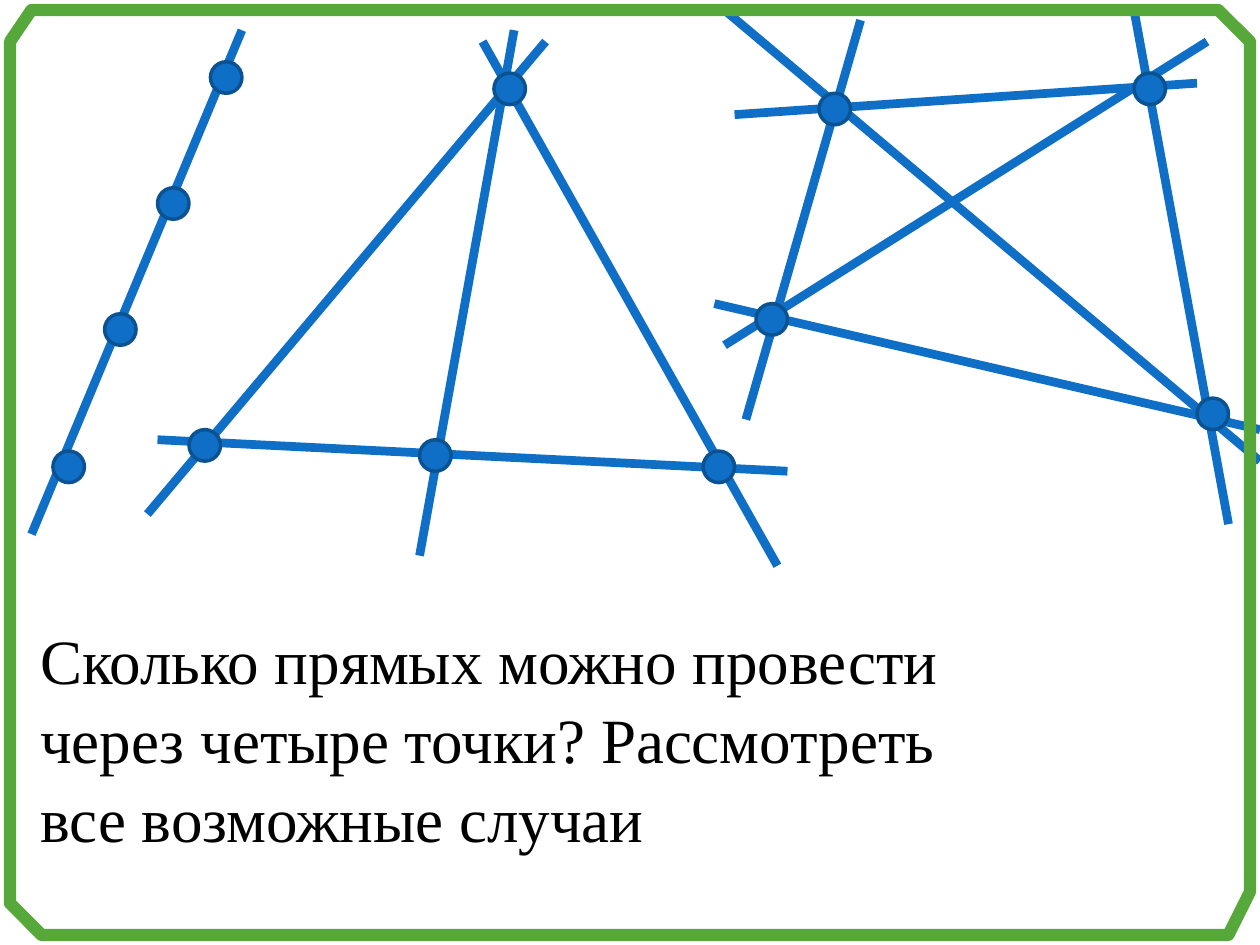
from dataclasses import dataclass

from pptx import Presentation
from pptx.dml.color import RGBColor
from pptx.enum.shapes import MSO_CONNECTOR as CONNECTOR, MSO_SHAPE as SHAPE
from pptx.oxml.ns import qn
from pptx.util import Pt
from lxml.etree import SubElement

PX = 9144  # EMU per px, at 100 px to the inch
COLORS = {"line": "0F6FC6", "dot_edge": "0B5292", "frame": "55A839", "text": "000000"}
DOT_SIZE = 25


@dataclass(frozen=True)
class Point:
    x: int
    y: int


@dataclass(frozen=True)
class Figure:
    """Four points, given by their top left corners, and the lines through them."""
    lines: list[tuple[Point, Point]]
    dots: list[Point]


COLLINEAR = Figure(
    lines=[(Point(25, 424), Point(192, 24))],
    dots=[Point(42, 358), Point(83, 249), Point(125, 149), Point(167, 49)],
)
THREE_COLLINEAR = Figure(
    lines=[
        (Point(117, 408), Point(433, 33)),
        (Point(617, 449), Point(383, 33)),
        (Point(333, 441), Point(408, 24)),
        (Point(125, 349), Point(625, 374)),
    ],
    dots=[Point(392, 58), Point(150, 341), Point(558, 358), Point(333, 349)],
)
GENERAL = Figure(
    lines=[
        (Point(583, 91), Point(950, 66)),
        (Point(975, 416), Point(900, 8)),
        (Point(575, 8), Point(1000, 366)),
        (Point(575, 274), Point(958, 33)),
        (Point(567, 241), Point(1000, 341)),
        (Point(592, 333), Point(683, 16)),
    ],
    dots=[Point(650, 74), Point(950, 316), Point(900, 58), Point(600, 241)],
)
FIGURES = [COLLINEAR, THREE_COLLINEAR, GENERAL]
FRAME = [
    Point(8, 33), Point(8, 717), Point(33, 742), Point(975, 742),
    Point(992, 708), Point(992, 33), Point(967, 8), Point(25, 8),
]
QUESTION = (
    "Сколько прямых можно провести через четыре точки? "
    "Рассмотреть все возможные случаи"
)


def rgb(name: str) -> RGBColor:
    return RGBColor.from_string(COLORS[name])


def set_line(shape, color: str, width: int) -> None:
    shape.line.color.rgb = rgb(color)
    shape.line.width = Pt(width)


def draw_line(page, start: Point, end: Point) -> None:
    line = page.shapes.add_connector(
        CONNECTOR.STRAIGHT, start.x * PX, start.y * PX, end.x * PX, end.y * PX
    )
    set_line(line, "line", 5)
    SubElement(line._element.spPr, qn("a:effectLst"))


def draw_dot(page, corner: Point) -> None:
    dot = page.shapes.add_shape(
        SHAPE.OVAL, corner.x * PX, corner.y * PX, DOT_SIZE * PX, DOT_SIZE * PX
    )
    dot.shadow.inherit = False
    dot.fill.solid()
    dot.fill.fore_color.rgb = rgb("line")
    set_line(dot, "dot_edge", 2)


def draw_frame(page, corners: list[Point]) -> None:
    first, *others = corners
    builder = page.shapes.build_freeform(first.x, first.y, scale=PX)
    builder.add_line_segments([(corner.x, corner.y) for corner in others], close=True)
    frame = builder.convert_to_shape()
    frame.shadow.inherit = False
    frame.fill.background()
    set_line(frame, "frame", 7)


def write_question(page) -> None:
    box = page.shapes.add_textbox(22 * PX, 485 * PX, 745 * PX, 192 * PX)
    box.text_frame.word_wrap = True
    para = box.text_frame.paragraphs[0]
    para.line_spacing = 1.05
    span = para.add_run()
    span.text = QUESTION
    span.font.name = "Times New Roman"
    span.font.size = Pt(36)
    span.font.color.rgb = rgb("text")


def main() -> None:
    deck = Presentation()
    deck.slide_width, deck.slide_height = 1000 * PX, 750 * PX
    page = deck.slides.add_slide(deck.slide_layouts[6])
    for figure in FIGURES:
        for start, end in figure.lines:
            draw_line(page, start, end)
    for figure in FIGURES:
        for corner in figure.dots:
            draw_dot(page, corner)
    draw_frame(page, FRAME)
    write_question(page)
    deck.save("out.pptx")


if __name__ == "__main__":
    main()
